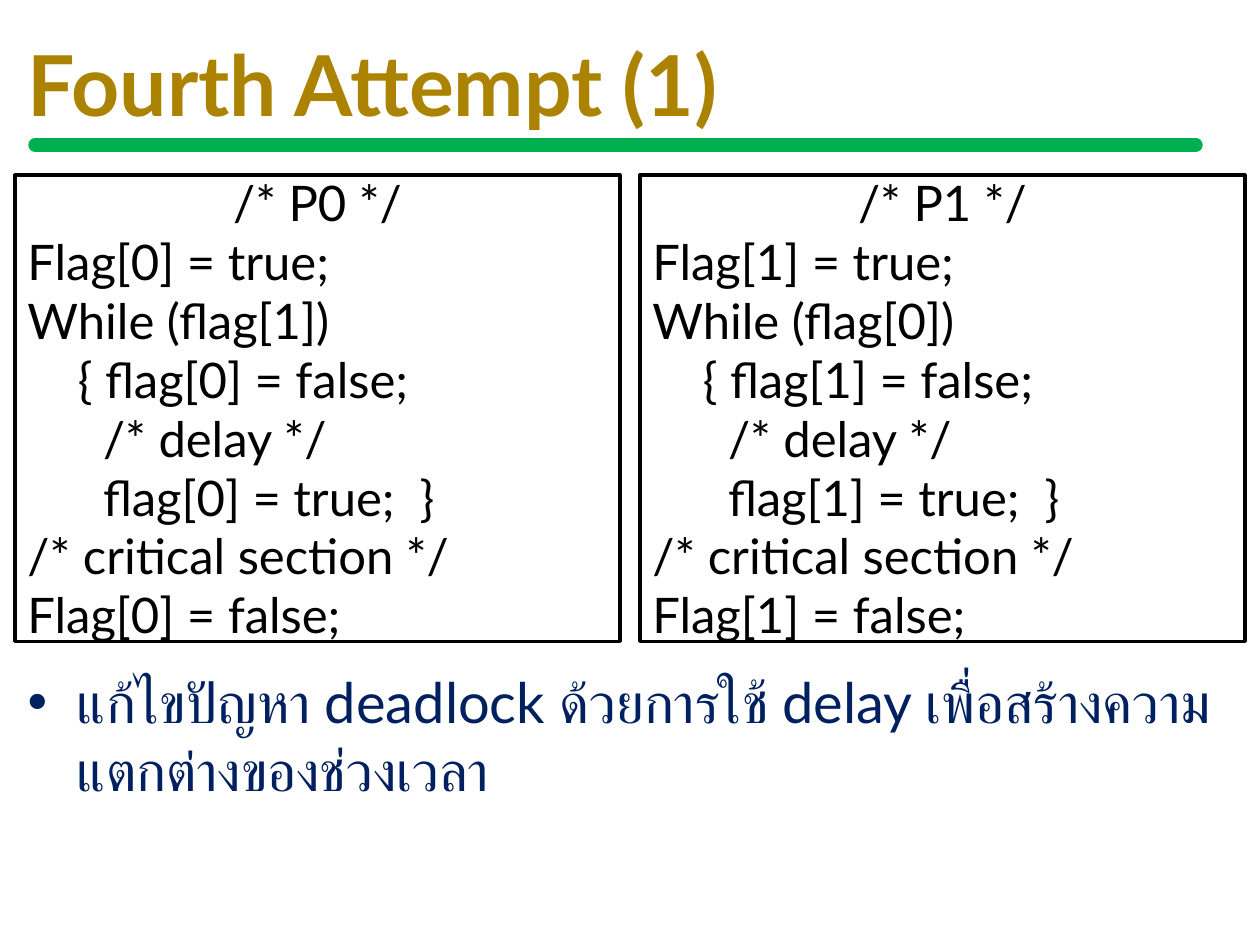
from pptx import Presentation
from pptx.dml.color import RGBColor
from pptx.enum import shapes, text
from pptx.oxml.ns import qn
from pptx.util import Inches, Pt

# Content
TITLE = "Fourth Attempt (1)"
NOTE = "แก้ไขปัญหา deadlock ด้วยการใช้ delay เพื่อสร้างความแตกต่างของช่วงเวลา"
CODE = [  # (line, indent in inches)
    ("Flag[{me}] = true;", 0),
    ("While (flag[{other}])", 0),
    ("{{ flag[{me}] = false;", 0.4),
    ("/* delay */", 0.6),
    ("flag[{me}] = true;  }}", 0.6),
    ("/* critical section */", 0),
    ("Flag[{me}] = false;", 0),
]

# Style
FONT = "Lato"
GOLD = RGBColor(0xAC, 0x83, 0x00)
NAVY = RGBColor(0x00, 0x20, 0x60)
GREEN = RGBColor(0x00, 0xB0, 0x50)
BLACK = RGBColor(0, 0, 0)
WHITE = RGBColor(0xFF, 0xFF, 0xFF)
MARGIN, BOX_W, BOX_GAP = 0.12, 4.8, 0.16


def write(p, words, size, color, bold=False, align=text.PP_ALIGN.LEFT,
          indent=0, first=0):
    p.alignment = align
    pPr = p._p.get_or_add_pPr()
    pPr.set("marL", str(Inches(indent)))
    pPr.set("indent", str(Inches(first)))
    r = p.add_run()
    r.text = words
    r.font.name, r.font.size, r.font.bold = FONT, Pt(size), bold
    r.font.color.rgb = color


def place(sp, left, top, width, height):
    sp.left, sp.top = Inches(left), Inches(top)
    sp.width, sp.height = Inches(width), Inches(height)


prs = Presentation()
prs.slide_width, prs.slide_height = Inches(10), Inches(7.5)
s = prs.slides.add_slide(prs.slide_layouts[1])

# Title and note
title, body = s.placeholders
place(title, MARGIN, 0.03, 9.76, 1.26)
title.text_frame.vertical_anchor = text.MSO_ANCHOR.MIDDLE
write(title.text_frame.paragraphs[0], TITLE, 48, GOLD, bold=True)
place(body, MARGIN, 5.25, 9.76, 2.13)
write(body.text_frame.paragraphs[0], NOTE, 32, NAVY, indent=0.39, first=-0.39)

# Rule under the title
rule = s.shapes.add_connector(shapes.MSO_CONNECTOR.STRAIGHT, Inches(0.28),
                              Inches(1.15), Inches(9.49), Inches(1.15))
rule.line.color.rgb, rule.line.width = GREEN, Pt(8)
rule.line._get_or_add_ln().set("cap", "rnd")
spPr = rule._element.spPr
spPr.append(spPr.makeelement(qn("a:effectLst"), {}))

# One code box per process
for me in (0, 1):
    left = MARGIN + me * (BOX_W + BOX_GAP)
    sp = s.shapes.add_shape(shapes.MSO_SHAPE.RECTANGLE, Inches(left),
                            Inches(1.39), Inches(BOX_W), Inches(3.7))
    sp.shadow.inherit = False
    sp.fill.solid()
    sp.fill.fore_color.rgb = WHITE
    sp.line.color.rgb, sp.line.width = BLACK, Pt(2)
    tf = sp.text_frame
    tf.word_wrap = True
    tf.vertical_anchor = text.MSO_ANCHOR.MIDDLE
    write(tf.paragraphs[0], f"/* P{me} */", 28, BLACK,
          align=text.PP_ALIGN.CENTER)
    for line, indent in CODE:
        write(tf.add_paragraph(), line.format(me=me, other=1 - me), 28, BLACK,
              indent=indent)

prs.save("out.pptx")
